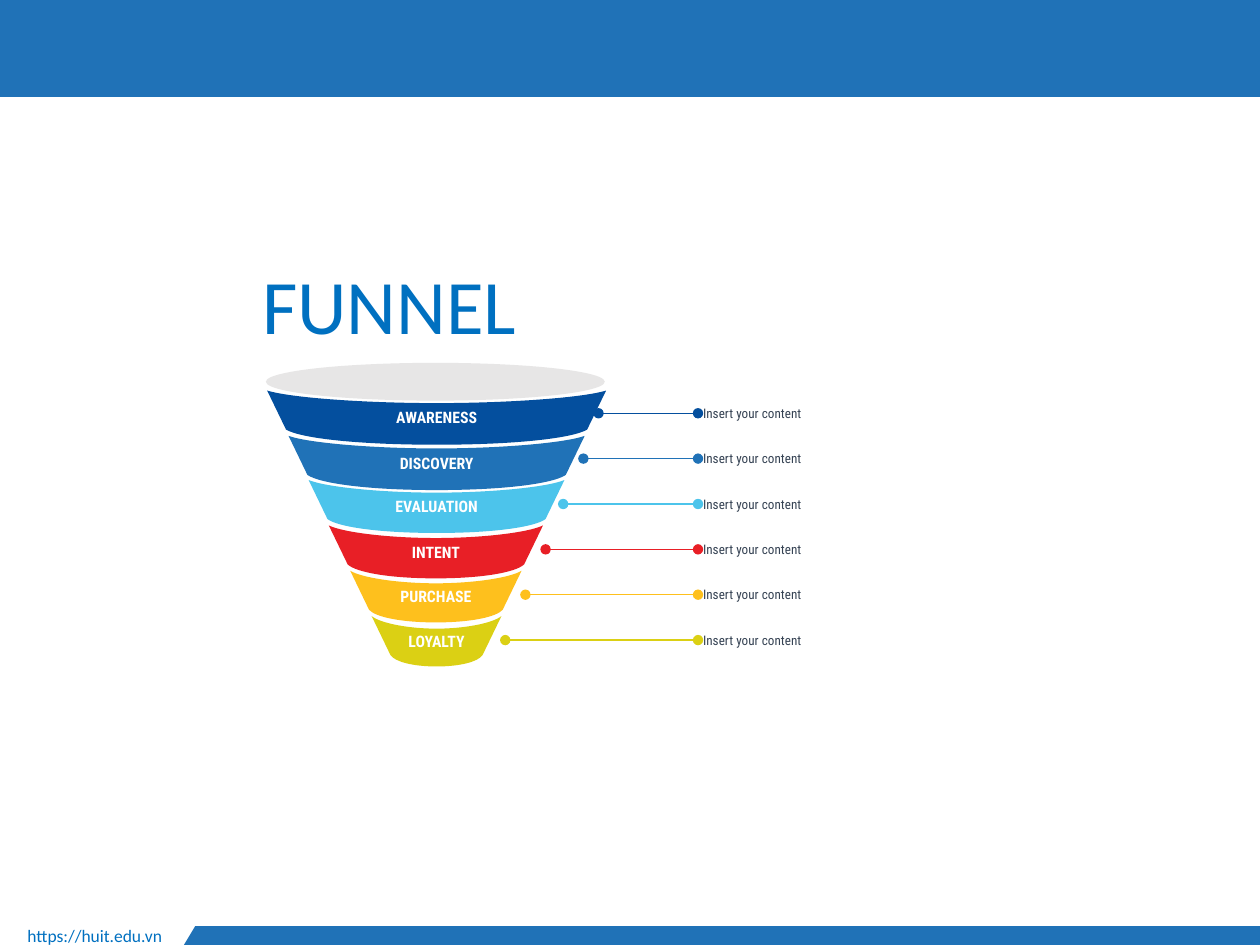
from lxml import etree
from pptx import Presentation
from pptx.dml.color import RGBColor
from pptx.enum import shapes, text
from pptx.oxml.ns import qn
from pptx.util import Inches, Pt

TITLE = "FUNNEL"
URL = "https://huit.edu.vn"
NOTE = "Insert your content"
STAGES = [
    ("AWARENESS", "044F9E", (2.12, 3.1, 2.69, 0.43), 4.75),
    ("DISCOVERY", "2072B7", (2.29, 3.46, 2.35, 0.43), 4.63),
    ("EVALUATION", "4CC4EB", (2.45, 3.81, 2.03, 0.42), 4.47),
    ("INTENT", "E81F26", (2.61, 4.17, 1.7, 0.42), 4.33),
    ("PURCHASE", "FEC01D", (2.78, 4.53, 1.36, 0.41), 4.17),
    ("LOYALTY", "DBD014", (2.95, 4.89, 1.03, 0.4), 4.01),
]
BLUE, TITLE_BLUE, RIM, GREY, WHITE = "2072B7", "0070C0", "E7E6E6", "354253", "FFFFFF"
HEADING, LABEL = "Calibri", "Roboto Condensed"
LEADER_TOP, LEADER_PITCH, LEADER_END = 3.28, 0.36, 5.54
SLANT, SIDE, RIM_SAG = 0.15, 0.31, 0.1


def color(value):
    return RGBColor.from_string(value)


def paint(sp, fill):
    sp.shadow.inherit = False
    sp.fill.solid()
    sp.fill.fore_color.rgb = color(fill)
    sp.line.fill.background()


def write(sp, content, size, font, fill, align=text.PP_ALIGN.LEFT,
          anchor=text.MSO_ANCHOR.MIDDLE, inset=(0, 0), bold=False):
    tf = sp.text_frame
    tf.text = content
    tf.word_wrap = True
    tf.auto_size = text.MSO_AUTO_SIZE.NONE
    tf.vertical_anchor = anchor
    tf.margin_left = tf.margin_right = Inches(inset[0])
    tf.margin_top = tf.margin_bottom = Inches(inset[1])
    p = tf.paragraphs[0]
    p.alignment = align
    f = p.runs[0].font
    f.size, f.name, f.bold = Pt(size), font, bold
    f.color.rgb = color(fill)
    return p


def add_text(s, box, *args, **kwargs):
    sp = s.shapes.add_textbox(*map(Inches, box))
    return write(sp, *args, **kwargs)


def add_outline(parent, points, fill):
    start, *rest = [(Inches(x), Inches(y)) for x, y in points]
    builder = parent.shapes.build_freeform(*start, scale=1.0)
    builder.add_line_segments(rest, close=True)
    sp = builder.convert_to_shape()
    paint(sp, fill)
    return sp


def bend(sp, first_points):
    lines = list(sp._element.iter(qn("a:lnTo")))
    for first in first_points:
        curve = etree.Element(qn("a:cubicBezTo"))
        lines[first].addprevious(curve)
        for line in lines[first:first + 3]:
            curve.append(line[0])
            line.getparent().remove(line)


def arc(center, half, y, sag, shoulder, belly):
    right = [(half, 0), (half * shoulder, 0.58), (half * belly, 1)]
    profile = [(-x, d) for x, d in right] + [(0, 1)] + right[::-1]
    return [(center + x, y + sag * d) for x, d in profile]


def add_band(group, name, fill, box):
    left, top, width, height = box
    half = width / 2
    rim = arc(left + half, half, top, RIM_SAG, 0.86, 0.42)
    base = arc(left + half, half - SLANT, top + SIDE, height - SIDE, 0.9, 0.52)
    sp = add_outline(group, rim[:1] + base + rim[::-1], fill)
    bend(sp, (1, 4, 8, 11))
    write(sp, name, 9, LABEL, WHITE, align=text.PP_ALIGN.CENTER, inset=(0.06, 0.03), bold=True)


def add_leader(s, x, y, fill):
    line = s.shapes.add_connector(shapes.MSO_CONNECTOR.STRAIGHT,
                                  Inches(x), Inches(y), Inches(LEADER_END), Inches(y))
    line.line.width = Pt(0.75)
    line.line.color.rgb = color(fill)
    ln = line.line._get_or_add_ln()
    for end in ("a:headEnd", "a:tailEnd"):
        etree.SubElement(ln, qn(end), type="oval")
    etree.SubElement(line._element.spPr, qn("a:effectLst"))


def main():
    prs = Presentation()
    prs.slide_width, prs.slide_height = Inches(10), Inches(7.5)
    s = prs.slides.add_slide(prs.slide_layouts[5])

    banner = s.shapes.add_shape(shapes.MSO_SHAPE.RECTANGLE, *map(Inches, (0, -0.01, 10, 0.78)))
    paint(banner, BLUE)
    add_outline(s, [(1.55, 7.35), (10, 7.35), (10, 7.5), (1.46, 7.5)], BLUE)
    add_text(s, (0.12, 7.29, 1.33, 0.28), URL, 10, HEADING, TITLE_BLUE,
             anchor=text.MSO_ANCHOR.TOP, inset=(0.1, 0.05))

    title = s.shapes.title
    title.left, title.top, title.width, title.height = map(Inches, (2.01, 2.3, 4.72, 0.56))
    p = write(title, TITLE, 44, HEADING, TITLE_BLUE,
              anchor=text.MSO_ANCHOR.BOTTOM, inset=(0.07, 0.07))
    p.line_spacing = 0.9

    funnel = s.shapes.add_group_shape()
    for name, fill, box, _ in STAGES:
        add_band(funnel, name, fill, box)
    rim = funnel.shapes.add_shape(shapes.MSO_SHAPE.OVAL, *map(Inches, (2.11, 2.88, 2.69, 0.3)))
    paint(rim, RIM)

    for i, (_, fill, _, x) in enumerate(STAGES):
        y = LEADER_TOP + LEADER_PITCH * i
        add_leader(s, x, y, fill)
        add_text(s, (5.58, y - 0.13, 2.08, 0.26), NOTE, 7.5, LABEL, GREY)

    prs.save("out.pptx")


if __name__ == "__main__":
    main()
